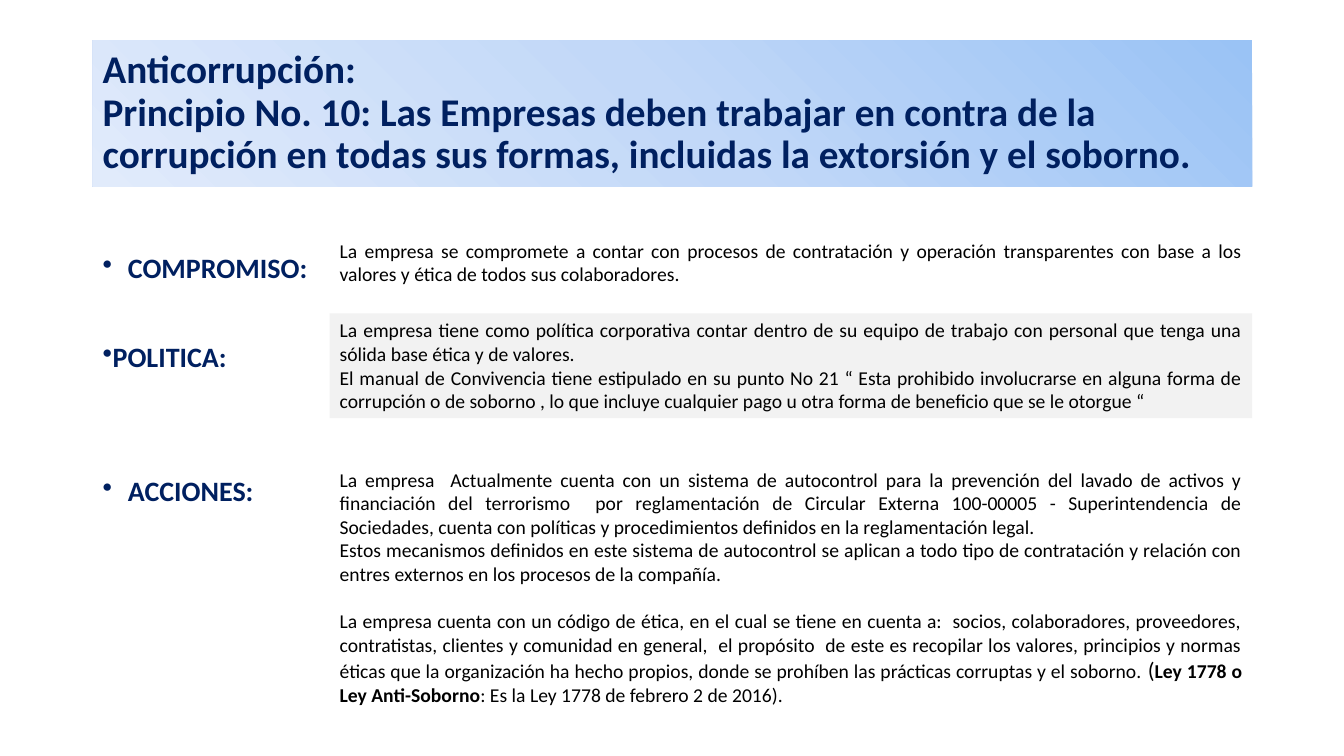
"""Build the anti-corruption principle slide: commitment, policy and actions."""
import copy
from dataclasses import dataclass, field

import pptx
import pptx.dml.color
import pptx.enum.shapes
import pptx.enum.text
import pptx.oxml.ns
import pptx.shapes.autoshape
import pptx.slide
import pptx.text.text
import pptx.util

FONT = "Calibri"
COLORS = {
    "navy": "002060",
    "body": "000000",
    "panel": "F2F2F2",
    "banner_dark": "9AC3F5",
    "banner_mid": "C2D8F8",
    "banner_light": "E1EBFB",
}
MARGIN_LEFT = 0.92
FULL_WIDTH = 11.5
DETAIL_LEFT = 3.27
DETAIL_WIDTH = MARGIN_LEFT + FULL_WIDTH - DETAIL_LEFT


@dataclass
class Run:
    text: str
    size: float | None = None
    bold: bool | None = None


@dataclass
class Paragraph:
    runs: list[Run]
    space_before: float = 0


@dataclass
class Detail:
    top: float
    height: float
    paragraphs: list[Paragraph] = field(default_factory=list)
    fill: str | None = None


@dataclass
class Heading:
    text: str
    space_before: float
    hanging: float


HEADINGS = [
    Heading("COMPROMISO:", 0, 0.25),
    Heading("POLITICA:", 42, 0),
    Heading("ACCIONES:", 74, 0.25),
]

DETAILS = [
    Detail(2.32, 0.57, [
        Paragraph([Run("La empresa se compromete a contar con procesos de contratación y operación "
                       "transparentes con base a los valores y ética de todos sus colaboradores.")]),
    ]),
    Detail(3.11, 1.04, [
        Paragraph([Run("La empresa tiene como política corporativa contar dentro de su equipo de trabajo "
                       "con personal que tenga una sólida base ética y de valores.")]),
        Paragraph([Run("El manual de Convivencia tiene estipulado en su punto No 21 “ Esta prohibido "
                       "involucrarse en alguna forma de corrupción o de soborno , lo que incluye cualquier "
                       "pago u otra forma de beneficio que se le otorgue “")]),
    ], "panel"),
    Detail(4.59, 2.6, [
        Paragraph([Run("La empresa  Actualmente cuenta con un sistema de autocontrol para la prevención del "
                       "lavado de activos y financiación del terrorismo  por reglamentación de Circular "
                       "Externa 100-00005 - Superintendencia de Sociedades, cuenta con políticas y "
                       "procedimientos definidos en la reglamentación legal.")]),
        Paragraph([Run("Estos mecanismos definidos en este sistema de autocontrol se aplican a todo tipo de "
                       "contratación y relación con entres externos en los procesos de la compañía.")]),
        Paragraph([
            Run("La empresa cuenta con un código de ética, en el cual se tiene en cuenta a:  socios, "
                "colaboradores, proveedores, contratistas, clientes y comunidad en general,  el propósito  "
                "de este es recopilar los valores, principios y normas éticas que la organización ha hecho "
                "propios, donde se prohíben las prácticas corruptas y el soborno. "),
            Run("(", size=16),
            Run("Ley 1778 o Ley Anti-Soborno", bold=True),
            Run(": Es la Ley 1778 de febrero 2 de 2016)."),
        ], space_before=17),
    ], None),
]


def rgb(name: str) -> pptx.dml.color.RGBColor:
    return pptx.dml.color.RGBColor.from_string(COLORS[name])


def add_block(slide: pptx.slide.Slide, left: float, top: float, width: float, height: float,
              filled: bool = False) -> pptx.shapes.autoshape.Shape:
    box = tuple(map(pptx.util.Inches, (left, top, width, height)))
    if filled:
        block = slide.shapes.add_shape(pptx.enum.shapes.MSO_SHAPE.RECTANGLE, *box)
        block.shadow.inherit = False
        block.line.fill.background()
    else:
        block = slide.shapes.add_textbox(*box)
    block.text_frame.word_wrap = True
    block.text_frame.vertical_anchor = pptx.enum.text.MSO_ANCHOR.TOP
    return block


def style(paragraph: pptx.text.text._Paragraph, size: float, color: str, bold: bool,
          align: pptx.enum.text.PP_ALIGN, line_spacing: float = 1.0, space_before: float = 0) -> None:
    paragraph.font.name = FONT
    paragraph.font.size = pptx.util.Pt(size)
    paragraph.font.bold = bold
    paragraph.font.color.rgb = rgb(color)
    paragraph.alignment = align
    paragraph.line_spacing = line_spacing
    paragraph.space_before = pptx.util.Pt(space_before)


def add_banner(slide: pptx.slide.Slide) -> None:
    banner = add_block(slide, MARGIN_LEFT, 0.4, FULL_WIDTH, 1.45, filled=True)
    banner.fill.gradient()
    banner.fill.gradient_angle = 225
    stop_list = banner.element.spPr.find(".//" + pptx.oxml.ns.qn("a:gsLst"))
    stop_list.insert(1, copy.deepcopy(stop_list[0]))
    shades = ("banner_dark", "banner_mid", "banner_light")
    for index, (stop, shade) in enumerate(zip(banner.fill.gradient_stops, shades)):
        stop.position = index / 2
        stop.color.rgb = rgb(shade)
    banner.text_frame.vertical_anchor = pptx.enum.text.MSO_ANCHOR.MIDDLE
    title = banner.text_frame.paragraphs[0]
    style(title, 28, "navy", True, pptx.enum.text.PP_ALIGN.LEFT, 0.9)
    title.add_run().text = "Anticorrupción: "
    title.add_line_break()
    title.add_run().text = ("Principio No. 10: Las Empresas deben trabajar en contra de la corrupción "
                            "en todas sus formas, incluidas la extorsión y el soborno.")


def add_headings(slide: pptx.slide.Slide, headings: list[Heading]) -> None:
    frame = add_block(slide, MARGIN_LEFT, 2, FULL_WIDTH, 4.76).text_frame
    frame.margin_top = pptx.util.Inches(0.52)
    for index, heading in enumerate(headings):
        paragraph = frame.add_paragraph() if index else frame.paragraphs[0]
        paragraph.text = heading.text
        style(paragraph, 20, "navy", True, pptx.enum.text.PP_ALIGN.JUSTIFY, 0.9, heading.space_before)
        properties = paragraph._p.get_or_add_pPr()
        indent = pptx.util.Inches(heading.hanging)
        properties.set("marL", str(indent))
        properties.set("indent", str(-indent))
        bullet = pptx.oxml.parse_xml(f'<a:buChar {pptx.oxml.ns.nsdecls("a")} char="•"/>')
        properties.find(pptx.oxml.ns.qn("a:defRPr")).addprevious(bullet)


def add_detail(slide: pptx.slide.Slide, detail: Detail) -> None:
    block = add_block(slide, DETAIL_LEFT, detail.top, DETAIL_WIDTH, detail.height, detail.fill is not None)
    if detail.fill:
        block.fill.solid()
        block.fill.fore_color.rgb = rgb(detail.fill)
    frame = block.text_frame
    for index, content in enumerate(detail.paragraphs):
        paragraph = frame.add_paragraph() if index else frame.paragraphs[0]
        style(paragraph, 14, "body", False, pptx.enum.text.PP_ALIGN.JUSTIFY,
              space_before=content.space_before)
        for part in content.runs:
            run = paragraph.add_run()
            run.text = part.text
            if part.size:
                run.font.size = pptx.util.Pt(part.size)
            if part.bold:
                run.font.bold = True


def main() -> None:
    presentation = pptx.Presentation()
    presentation.slide_width = pptx.util.Inches(13.33)
    presentation.slide_height = pptx.util.Inches(7.5)
    slide = presentation.slides.add_slide(presentation.slide_layouts[6])
    add_banner(slide)
    add_headings(slide, HEADINGS)
    for detail in DETAILS:
        add_detail(slide, detail)
    presentation.save("out.pptx")


if __name__ == "__main__":
    main()
